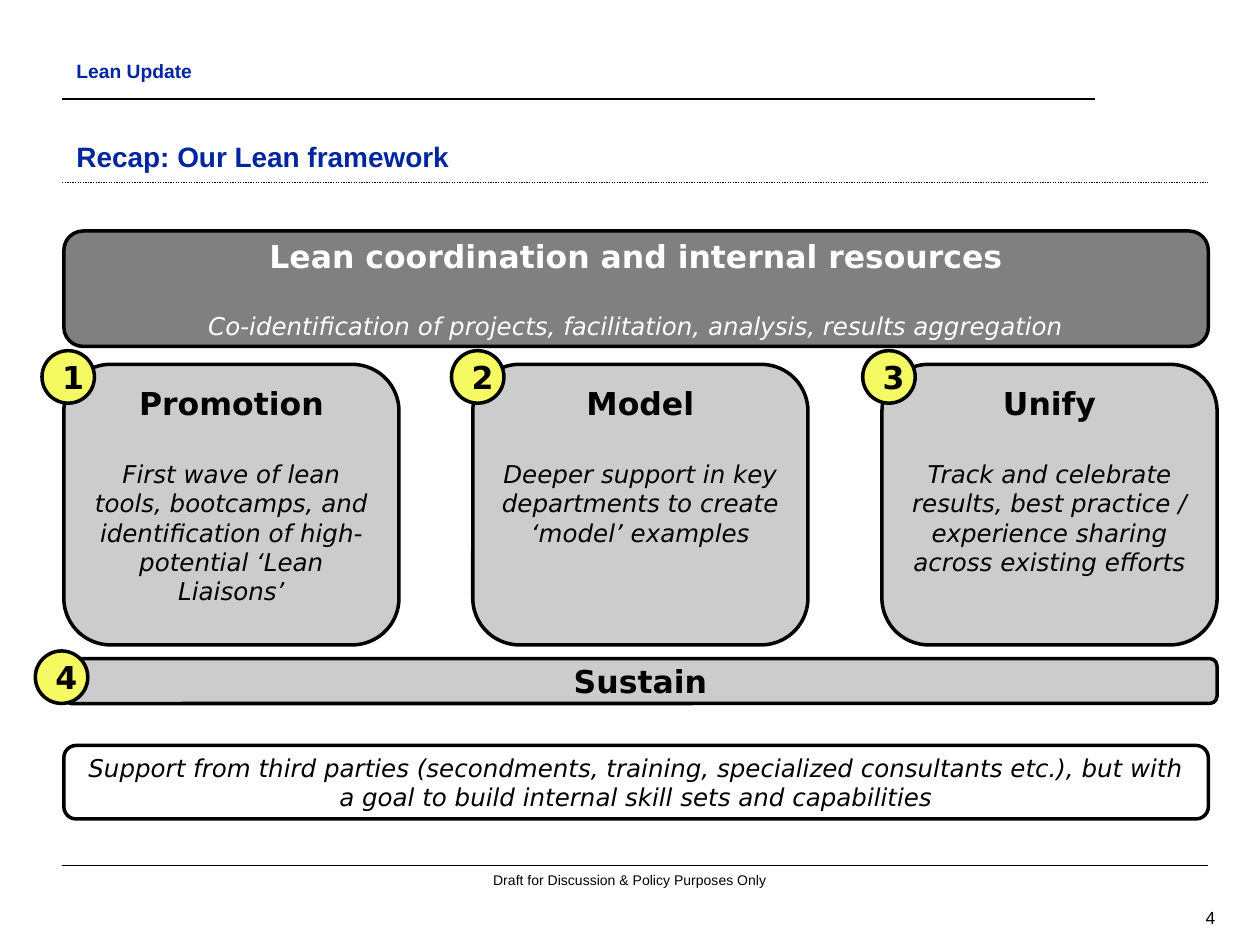
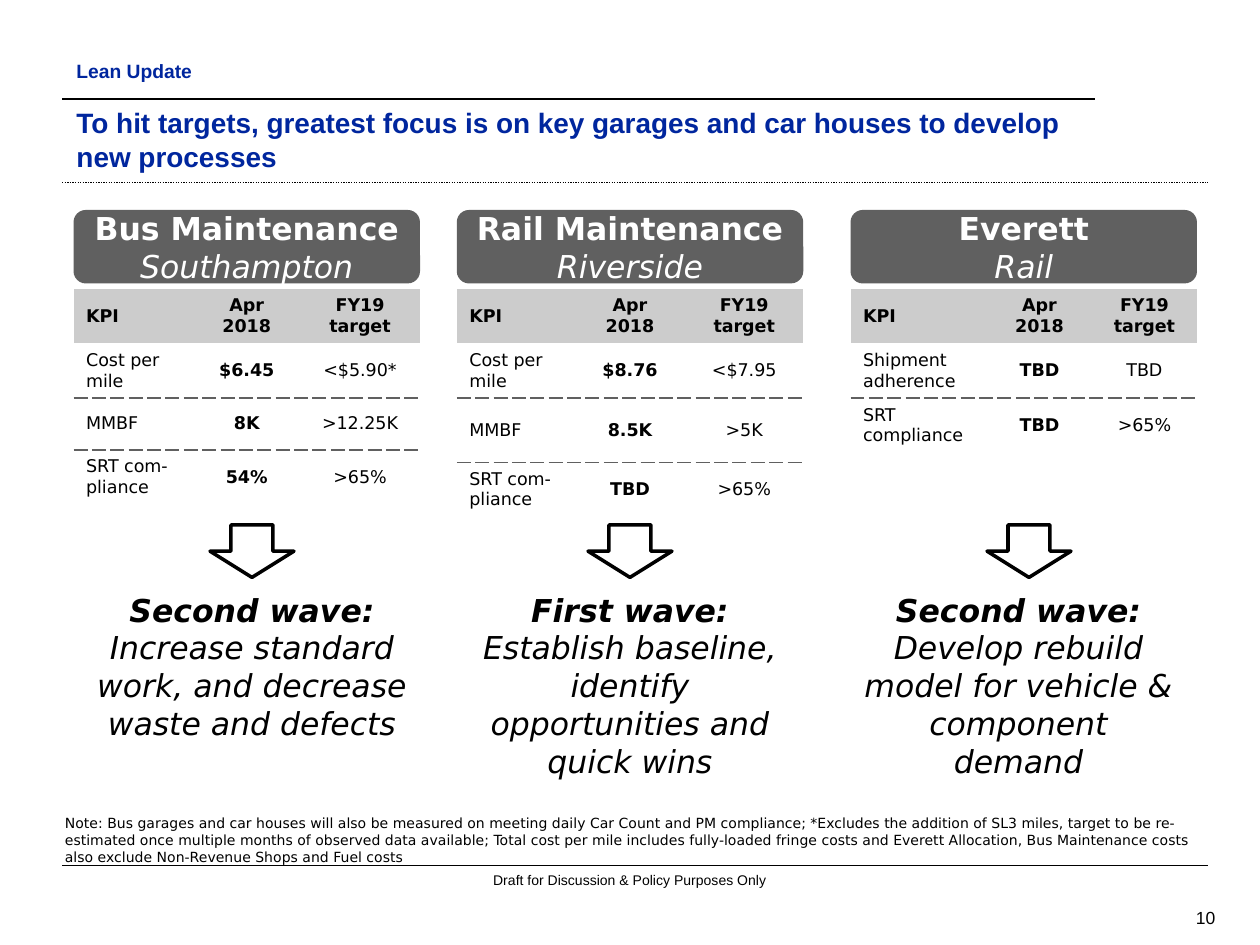
from lxml import etree
from pptx import Presentation
from pptx.dml.color import RGBColor
from pptx.enum import dml, shapes, text
from pptx.oxml import ns
from pptx.util import Pt

NAVY = RGBColor(0x00, 0x26, 0x9E)
BLACK = RGBColor(0x00, 0x00, 0x00)
WHITE = RGBColor(0xFF, 0xFF, 0xFF)
GRAY = RGBColor(0x80, 0x80, 0x80)
DARK_GRAY = RGBColor(0x60, 0x60, 0x60)
LIGHT_GRAY = RGBColor(0xCC, 0xCC, 0xCC)
YELLOW = RGBColor(0xF6, 0xFA, 0x62)

HEADING_FONT = "Arial"
BODY_FONT = "DejaVu Sans"
NO_TABLE_STYLE = "{2D5ABB26-0587-4C30-8999-92F81FD0307C}"

LEFT, CENTER, RIGHT = (text.PP_ALIGN.LEFT, text.PP_ALIGN.CENTER,
                       text.PP_ALIGN.RIGHT)
TOP, MIDDLE, BOTTOM = (text.MSO_ANCHOR.TOP, text.MSO_ANCHOR.MIDDLE,
                       text.MSO_ANCHOR.BOTTOM)
ROUNDED = shapes.MSO_SHAPE.ROUNDED_RECTANGLE
OVAL = shapes.MSO_SHAPE.OVAL
DOWN_ARROW = shapes.MSO_SHAPE.DOWN_ARROW


def write(frame, words, size=18, bold=False, italic=False, color=BLACK,
          font=BODY_FONT, align=CENTER, gap=0, same_line=False):
    """Append words to frame, as a new paragraph unless same_line is set."""
    paragraph = frame.paragraphs[-1]
    if paragraph.runs and not same_line:
        paragraph = frame.add_paragraph()
        paragraph.space_before = Pt(gap)
    paragraph.alignment = align
    run = paragraph.add_run()
    run.text = words
    run.font.name, run.font.size = font, Pt(size)
    run.font.bold, run.font.italic = bold, italic
    run.font.color.rgb = color


def dash_below(cell):
    border = etree.SubElement(cell._tc.get_or_add_tcPr(), ns.qn("a:lnB"),
                              w=str(Pt(1)))
    fill = etree.SubElement(border, ns.qn("a:solidFill"))
    etree.SubElement(fill, ns.qn("a:srgbClr"), val=str(DARK_GRAY))
    etree.SubElement(border, ns.qn("a:prstDash"), val="sysDash")


class Deck:
    def __init__(self):
        self.presentation = Presentation()
        self.presentation.slide_width = Pt(720)
        self.presentation.slide_height = Pt(540)
        self.slide = None

    def new_slide(self, title, number, title_width):
        layout = self.presentation.slide_layouts[5]
        self.slide = self.presentation.slides.add_slide(layout)
        self.rule(626, 56.6, weight=1)
        self.rule(690.5, 104.3, dash=dml.MSO_LINE.ROUND_DOT)
        self.rule(690.5, 494.5)
        self.label(641.5, 515.5, 60, 18, str(number), anchor=MIDDLE,
                   size=10, font=HEADING_FONT, align=RIGHT)
        self.label(257, 494.6, 206, 17,
                   "Draft for Discussion & Policy Purposes Only",
                   size=8, font=HEADING_FONT)
        self.label(36.5, 30.2, 575, 18, "Lean Update", size=11, bold=True,
                   color=NAVY, font=HEADING_FONT, align=LEFT)
        heading = self.slide.shapes.title
        heading.left, heading.top = Pt(36.5), Pt(65.5)
        heading.width, heading.height = Pt(title_width), Pt(37)
        frame = heading.text_frame
        frame.auto_size = text.MSO_AUTO_SIZE.NONE
        frame.vertical_anchor = BOTTOM
        write(frame, title, size=16, bold=True, color=NAVY,
              font=HEADING_FONT, align=LEFT)

    def rule(self, right, y, weight=0.75, dash=None):
        line = self.slide.shapes.add_connector(
            shapes.MSO_CONNECTOR.STRAIGHT, Pt(35.5), Pt(y), Pt(right), Pt(y))
        line.line.color.rgb = BLACK
        line.line.width = Pt(weight)
        if dash:
            line.line.dash_style = dash
        etree.SubElement(line.element.spPr, ns.qn("a:effectLst"))

    def label(self, left, top, width, height, words, anchor=TOP, **style):
        box = self.slide.shapes.add_textbox(Pt(left), Pt(top), Pt(width),
                                            Pt(height))
        frame = box.text_frame
        frame.word_wrap = True
        frame.vertical_anchor = anchor
        write(frame, words, **style)
        return frame

    def shape(self, kind, left, top, width, height, fill=None, outline=True,
              anchor=MIDDLE):
        shape = self.slide.shapes.add_shape(kind, Pt(left), Pt(top),
                                            Pt(width), Pt(height))
        shape.shadow.inherit = False
        if fill is None:
            shape.fill.background()
        else:
            shape.fill.solid()
            shape.fill.fore_color.rgb = fill
        if outline:
            shape.line.color.rgb = BLACK
            shape.line.width = Pt(2)
        else:
            shape.line.fill.background()
        shape.text_frame.word_wrap = True
        shape.text_frame.vertical_anchor = anchor
        return shape.text_frame

    def badge(self, left, top, number):
        write(self.shape(OVAL, left, top, 30, 30, YELLOW), str(number),
              bold=True)

    def kpi_table(self, left, top, widths, heights, rows):
        holder = self.slide.shapes.add_table(
            len(rows), len(widths), Pt(left), Pt(top), Pt(sum(widths)),
            Pt(sum(heights)))
        next(holder.element.iter(ns.qn("a:tableStyleId"))).text = NO_TABLE_STYLE
        table = holder.table
        table.horz_banding = False
        for column, width in zip(table.columns, widths):
            column.width = Pt(width)
        for r, (values, height) in enumerate(zip(rows, heights)):
            table.rows[r].height = Pt(height)
            for c, value in enumerate(values):
                cell = table.cell(r, c)
                cell.vertical_anchor = MIDDLE
                if 0 < r < len(rows) - 1:
                    dash_below(cell)
                if r == 0:
                    cell.fill.solid()
                    cell.fill.fore_color.rgb = LIGHT_GRAY
                else:
                    cell.fill.background()
                write(cell.text_frame, value, size=10,
                      bold=r == 0 or c == 1, align=CENTER if c else LEFT)


def framework_slide(deck):
    deck.new_slide("Recap: Our Lean framework", 4, title_width=654)
    coordination = deck.shape(ROUNDED, 36.5, 132, 654, 66, GRAY)
    write(coordination, "Lean coordination and internal resources",
          bold=True, color=WHITE)
    write(coordination, "Co-identification of projects, facilitation, "
          "analysis, results aggregation",
          size=14, italic=True, color=WHITE, gap=21)

    support = deck.shape(ROUNDED, 36.5, 426, 654, 42, WHITE)
    write(support, "Support from third parties (secondments, training, "
          "specialized consultants etc.), but with a goal to build internal "
          "skill sets and capabilities", size=14, italic=True)

    pillars = [
        (36.5, 24, "Promotion", "First wave of lean tools, bootcamps, and "
         "identification of high-potential ‘Lean Liaisons’"),
        (270.2, 258, "Model", "Deeper support in key departments to create "
         "‘model’ examples"),
        (504, 493, "Unify", "Track and celebrate results, best practice / "
         "experience sharing across existing efforts"),
    ]
    for number, (left, badge_left, name, detail) in enumerate(pillars, 1):
        pillar = deck.shape(ROUNDED, left, 208.2, 191.5, 160.3, LIGHT_GRAY,
                            anchor=TOP)
        write(pillar, name, bold=True)
        write(pillar, detail, size=14, italic=True, gap=21)
        deck.badge(badge_left, 200.4, number)

    write(deck.shape(ROUNDED, 36.5, 376.3, 659, 25.7, LIGHT_GRAY), "Sustain",
          bold=True)
    deck.badge(20.2, 372, 4)


def targets_slide(deck):
    deck.new_slide("To hit targets, greatest focus is on key garages and car "
                   "houses to develop new processes", 10, title_width=610.5)
    row = 29.5
    header = ("KPI", "Apr 2018", "FY19 target")
    # Lefts of header, arrow and wave; names; table grid; KPIs; wave text
    areas = [
        ((42, 120, 48), "Bus Maintenance", "Southampton",
         (68.5, 61, 68.5), (row,) * 4,
         [("Cost per mile", "$6.45", "<$5.90*"),
          ("MMBF", "8K", ">12.25K"),
          ("SRT com-pliance", "54%", ">65%")],
         "Second wave: ",
         "Increase standard work, and decrease waste and defects"),
        ((261, 336, 264), "Rail Maintenance", "Riverside",
         (67.5, 63, 67.5), (row, row, 36.7, row),
         [("Cost per mile", "$8.76", "<$7.95"),
          ("MMBF", "8.5K", ">5K"),
          ("SRT com-pliance", "TBD", ">65%")],
         "First wave:",
         "Establish baseline, identify opportunities and quick wins"),
        ((486, 564, 486), "Everett", "Rail",
         (78, 60, 60), (row,) * 3,
         [("Shipment adherence", "TBD", "TBD"),
          ("SRT compliance", "TBD", ">65%")],
         "Second wave: ",
         "Develop rebuild model for vehicle & component demand"),
    ]
    for lefts, area, place, widths, heights, kpis, wave, plan in areas:
        left, arrow_left, wave_left = lefts
        banner = deck.shape(ROUNDED, left, 120, 198, 42, DARK_GRAY,
                            outline=False)
        write(banner, area, bold=True, color=WHITE)
        write(banner, place, italic=True, color=WHITE)
        deck.kpi_table(left, 165, widths, heights, [header, *kpis])
        deck.shape(DOWN_ARROW, arrow_left, 300, 48, 30)
        goal = deck.label(wave_left, 334, 192, 116, wave, bold=True,
                          italic=True)
        write(goal, plan, italic=True, same_line=wave.endswith(" "))

    deck.label(30, 462, 660, 36, "Note: Bus garages and car houses will also "
               "be measured on meeting daily Car Count and PM compliance; "
               "*Excludes the addition of SL3 miles, target to be "
               "re-estimated once multiple months of observed data "
               "available; Total cost per mile includes fully-loaded fringe "
               "costs and Everett Allocation, Bus Maintenance costs also "
               "exclude Non-Revenue Shops and Fuel costs",
               size=8, align=LEFT)


def main():
    deck = Deck()
    framework_slide(deck)
    targets_slide(deck)
    deck.presentation.save("out.pptx")


if __name__ == "__main__":
    main()
